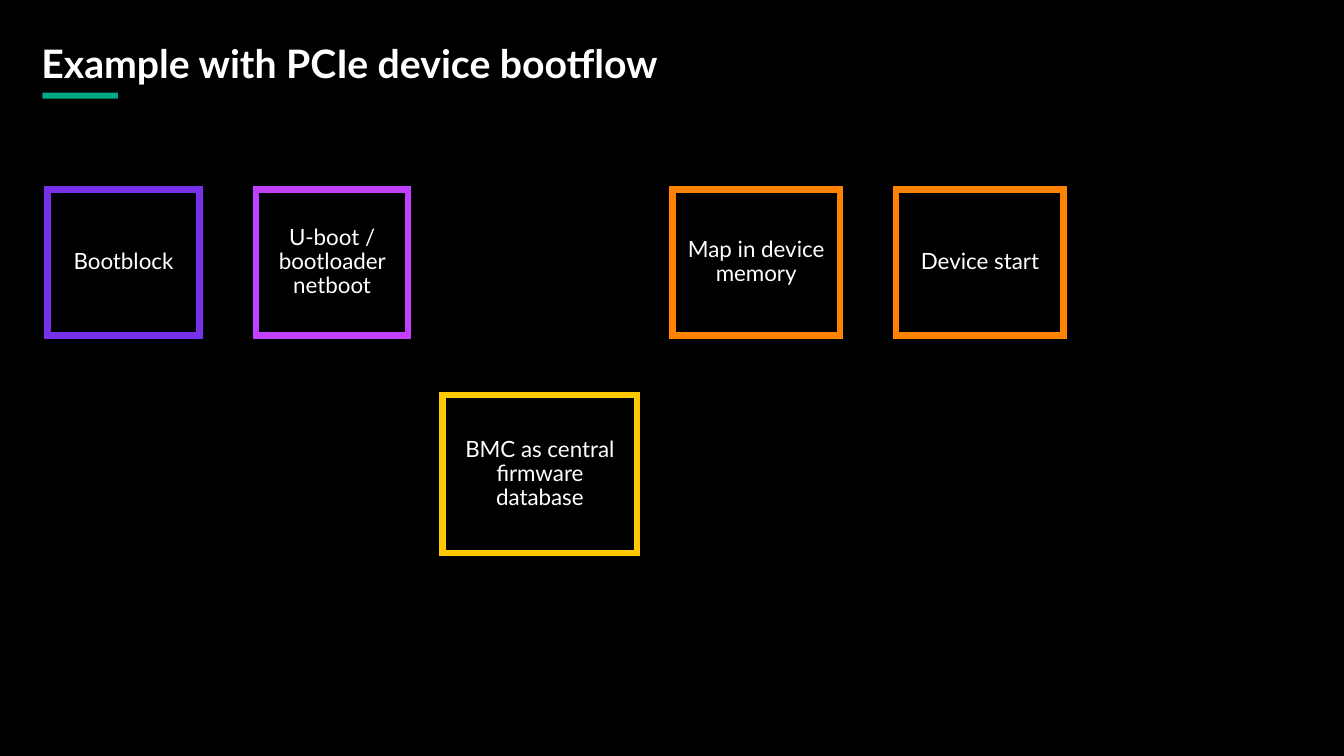
from dataclasses import dataclass

from lxml.etree import SubElement
from pptx import Presentation
from pptx.dml.color import RGBColor
from pptx.enum.shapes import MSO_SHAPE
from pptx.enum.text import MSO_ANCHOR, MSO_AUTO_SIZE, PP_ALIGN
from pptx.oxml.ns import qn
from pptx.shapes.autoshape import Shape
from pptx.slide import Slide
from pptx.text.text import TextFrame
from pptx.util import Inches, Pt

RECTANGLE = MSO_SHAPE.RECTANGLE
MIDDLE = MSO_ANCHOR.MIDDLE
NO_FIT = MSO_AUTO_SIZE.NONE
LEFT = PP_ALIGN.LEFT
CENTER = PP_ALIGN.CENTER

SLIDE_WIDTH = Inches(13.33)
SLIDE_HEIGHT = Inches(7.5)
FONT = "Lato"
BLACK = "000000"
WHITE = "FFFFFF"
GREEN = "01A982"
PURPLE = "7630EA"
MAGENTA = "C140FF"
ORANGE = "FF8300"
YELLOW = "FEC901"
FRAME_WIDTH = 4.5


@dataclass(frozen=True)
class Area:
    left: float
    top: float
    width: float
    height: float

    def lengths(self) -> tuple[int, int, int, int]:
        return (
            across(self.left),
            down(self.top),
            across(self.width),
            down(self.height),
        )


@dataclass(frozen=True)
class Stage:
    label: str
    color: str
    area: Area


STAGE_TOP = 25.07
STAGE_HEIGHT = 19.33
LOADER_WIDTH = 11.33
DEVICE_WIDTH = 12.45

TITLE_AREA = Area(2.33, 5.73, 94.3, 5.87)
ACCENT_AREA = Area(3.15, 12.27, 5.63, 0.8)

STAGES = [
    Stage("Bootblock", PURPLE, Area(3.53, STAGE_TOP, LOADER_WIDTH, STAGE_HEIGHT)),
    Stage(
        "U-boot / bootloader netboot",
        MAGENTA,
        Area(19.05, STAGE_TOP, LOADER_WIDTH, STAGE_HEIGHT),
    ),
    Stage("BMC as central firmware database", YELLOW, Area(32.93, 52.27, 14.48, 20.93)),
    Stage(
        "Map in device memory",
        ORANGE,
        Area(50.04, STAGE_TOP, DEVICE_WIDTH, STAGE_HEIGHT),
    ),
    Stage("Device start", ORANGE, Area(66.69, STAGE_TOP, DEVICE_WIDTH, STAGE_HEIGHT)),
]


def across(percent: float) -> int:
    return round(SLIDE_WIDTH * percent / 100)


def down(percent: float) -> int:
    return round(SLIDE_HEIGHT * percent / 100)


def rgb(value: str) -> RGBColor:
    return RGBColor.from_string(value)


def write_text(
    frame: TextFrame, text: str, size: float, bold: bool, align: PP_ALIGN, inset: float
) -> None:
    frame.word_wrap = True
    frame.auto_size = NO_FIT
    frame.vertical_anchor = MIDDLE
    frame.margin_left = frame.margin_right = across(inset)
    frame.margin_top = frame.margin_bottom = across(inset)
    para = frame.paragraphs[0]
    para.alignment = align
    para.line_spacing = 0.9
    para.space_before = Pt(0)
    span = para.add_run()
    span.text = text
    span.font.name = FONT
    span.font.size = Pt(size)
    span.font.bold = bold
    span.font.color.rgb = rgb(WHITE)


def add_box(page: Slide, area: Area) -> Shape:
    box = page.shapes.add_shape(RECTANGLE, *area.lengths())
    box.shadow.inherit = False
    return box


def add_bar(page: Slide, area: Area, color: str) -> None:
    bar = add_box(page, area)
    bar.fill.solid()
    bar.fill.fore_color.rgb = rgb(color)
    bar.line.fill.background()


def add_stage(page: Slide, stage: Stage) -> None:
    box = add_box(page, stage.area)
    box.fill.background()
    box.line.color.rgb = rgb(stage.color)
    box.line.width = Pt(FRAME_WIDTH)
    outline = box.element.spPr.find(qn("a:ln"))
    SubElement(outline, qn("a:miter"), lim="800000")
    write_text(box.text_frame, stage.label, 16, False, CENTER, 0.98)


def set_title(page: Slide, text: str) -> None:
    title = page.shapes.title
    title.left, title.top, title.width, title.height = TITLE_AREA.lengths()
    write_text(title.text_frame, text, 28, True, LEFT, 0.75)


def main() -> None:
    deck = Presentation()
    deck.slide_width = SLIDE_WIDTH
    deck.slide_height = SLIDE_HEIGHT
    page = deck.slides.add_slide(deck.slide_layouts.get_by_name("Title Only"))
    page.background.fill.solid()
    page.background.fill.fore_color.rgb = rgb(BLACK)
    set_title(page, "Example with PCIe device bootflow")
    add_bar(page, ACCENT_AREA, GREEN)
    for stage in STAGES:
        add_stage(page, stage)
    deck.save("out.pptx")


if __name__ == "__main__":
    main()
